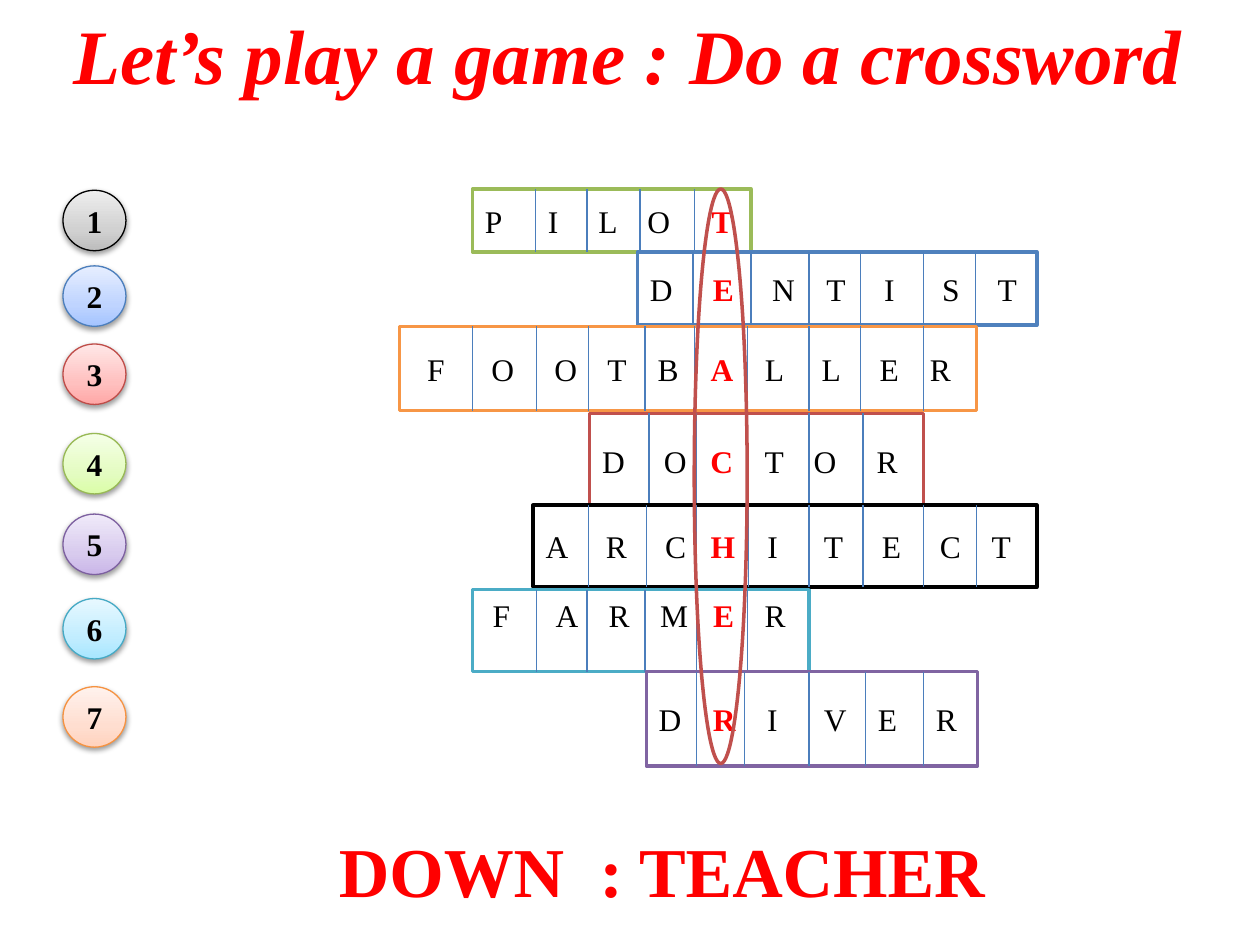
from dataclasses import dataclass

from lxml.etree import SubElement
from pptx import Presentation
from pptx.dml.color import RGBColor
from pptx.enum.shapes import MSO_CONNECTOR, MSO_SHAPE
from pptx.enum.text import MSO_ANCHOR, PP_ALIGN
from pptx.oxml.ns import qn
from pptx.util import Inches, Pt


@dataclass(frozen=True)
class Theme:
    font: str = "Times New Roman"
    answer: str = "FF0000"
    letter: str = "000000"
    paper: str = "FFFFFF"
    divider: str = "4B7EBC"
    column_ring: str = "C0504D"
    title_size: int = 44
    solution_size: int = 40
    letter_size: int = 18
    thin: float = 0.75
    thick: float = 2


THEME = Theme()

# word, index of the answer letter, left, top, width, height, outline,
# left edge of each letter, dividers between the letters
ROWS = [
    ("PILOT", 4, 3.75, 1.5, 2.21, 0.5, "9BBB59",
     [3.85, 4.35, 4.75, 5.14, 5.65],
     [4.25, 4.66, 5.08, 5.51]),
    ("DENTIST", 1, 5.06, 2, 3.17, 0.58, "4F81BD",
     [5.16, 5.66, 6.13, 6.56, 7.02, 7.48, 7.92],
     [5.5, 5.96, 6.42, 6.83, 7.33, 7.74]),
    ("FOOTBALLER", 5, 3.17, 2.59, 4.58, 0.67, "F79646",
     [3.39, 3.9, 4.4, 4.82, 5.22, 5.64, 6.07, 6.52, 6.98, 7.38],
     [3.75, 4.26, 4.67, 5.12, 5.51, 5.93, 6.42, 6.83, 7.33]),
    ("DOCTOR", 2, 4.68, 3.28, 2.65, 0.75, "C0504D",
     [4.78, 5.27, 5.64, 6.07, 6.46, 6.96],
     [5.15, 5.53, 5.93, 6.42, 6.85]),
    ("ARCHITECT", 3, 4.23, 4.01, 4, 0.65, "000000",
     [4.33, 4.81, 5.28, 5.64, 6.09, 6.54, 7, 7.46, 7.87],
     [4.67, 5.13, 5.53, 5.94, 6.42, 6.85, 7.33, 7.75]),
    ("FARMER", 4, 3.75, 4.68, 2.67, 0.65, "4BACC6",
     [3.91, 4.41, 4.83, 5.24, 5.66, 6.07],
     [4.26, 4.66, 5.12, 5.53, 5.93]),
    ("DRIVER", 1, 5.13, 5.33, 2.63, 0.75, "8064A2",
     [5.23, 5.66, 6.09, 6.54, 6.97, 7.43],
     [5.53, 5.91, 6.42, 6.87, 7.33]),
]

# top, outline, gradient colours from bottom to top
BADGES = [
    (1.51, "000000", ("BDBDBD", "D1D1D1", "EEEEEE")),
    (2.11, "4B7EBC", ("A4C4FF", "BFD4FF", "E6EEFF")),
    (2.73, "BF4C48", ("FFA6A5", "FFC0BF", "FFE7E7")),
    (3.44, "98B955", ("DAFDA7", "E4FCC2", "F5FFE7")),
    (4.08, "7D60A0", ("C9B5E8", "D8CBEE", "F0EAF9")),
    (4.75, "46AAC5", ("A7E6FF", "C1EDFF", "E7F8FF")),
    (5.45, "F69240", ("FFD2BD", "FFDED0", "FFF2ED")),
]

# text, left, top, width, height, size, italic, alignment, left margin
HEADINGS = [
    ("Let’s play a game : Do a crossword", -0.03, 0.01, 10.03, 5.55,
     THEME.title_size, True, PP_ALIGN.CENTER, 0.1),
    ("DOWN", 2.17, 6.52, 2.55, 0.77,
     THEME.solution_size, False, PP_ALIGN.LEFT, 0.52),
    (": TEACHER", 4.66, 6.52, 5.39, 0.77,
     THEME.solution_size, False, PP_ALIGN.LEFT, 0.1),
]


def add_run(paragraph, text, size, color, bold=False, italic=False):
    run = paragraph.add_run()
    run.text = text
    run.font.name = THEME.font
    run.font.size = Pt(size)
    run.font.bold = bold
    run.font.italic = italic
    run.font.color.rgb = RGBColor.from_string(color)


def add_outlined(kind, left, top, width, height, color, weight):
    """Add an unfilled preset shape without a shadow."""
    shape = slide.shapes.add_shape(
        kind, Inches(left), Inches(top), Inches(width), Inches(height))
    shape.shadow.inherit = False
    shape.fill.background()
    shape.line.color.rgb = RGBColor.from_string(color)
    shape.line.width = Pt(weight)
    shape.text_frame.vertical_anchor = MSO_ANCHOR.MIDDLE
    return shape


presentation = Presentation()
presentation.slide_width = Inches(10)
presentation.slide_height = Inches(7.5)
slide = presentation.slides.add_slide(presentation.slide_layouts[6])

for text, left, top, width, height, size, italic, alignment, margin in HEADINGS:
    box = slide.shapes.add_textbox(
        Inches(left), Inches(top), Inches(width), Inches(height))
    box.text_frame.word_wrap = True
    box.text_frame.margin_left = Inches(margin)
    paragraph = box.text_frame.paragraphs[0]
    paragraph.alignment = alignment
    add_run(paragraph, text, size, THEME.answer, True, italic)

for word, answer, left, top, width, height, color, starts, dividers in ROWS:
    row = add_outlined(
        MSO_SHAPE.RECTANGLE, left, top, width, height, color, THEME.thick)
    row.fill.solid()
    row.fill.fore_color.rgb = RGBColor.from_string(THEME.paper)
    frame = row.text_frame
    frame.margin_left = Inches(starts[0] - left)
    frame.margin_right = 0
    if word == "FARMER":
        frame.vertical_anchor = MSO_ANCHOR.TOP
    paragraph = frame.paragraphs[0]
    paragraph.alignment = PP_ALIGN.LEFT
    tab_list = SubElement(paragraph._p.get_or_add_pPr(), qn("a:tabLst"))
    for start in starts[1:]:
        SubElement(tab_list, qn("a:tab"),
                   pos=str(Inches(start - starts[0])), algn="l")
    before, after = "\t".join(word[:answer]), "\t".join(word[answer + 1:])
    add_run(paragraph, before + "\t", THEME.letter_size, THEME.letter)
    add_run(paragraph, word[answer], THEME.letter_size, THEME.answer, True)
    if after:
        add_run(paragraph, "\t" + after, THEME.letter_size, THEME.letter)

    for x in dividers:
        divider = slide.shapes.add_connector(
            MSO_CONNECTOR.STRAIGHT,
            Inches(x), Inches(top), Inches(x), Inches(top + height))
        divider.line.color.rgb = RGBColor.from_string(THEME.divider)
        divider.line.width = Pt(THEME.thin)
        SubElement(divider._element.spPr, qn("a:effectLst"))

add_outlined(MSO_SHAPE.OVAL, 5.51, 1.5, 0.42, 4.56,
             THEME.column_ring, THEME.thick)

for number, (top, color, gradient) in enumerate(BADGES, start=1):
    badge = add_outlined(
        MSO_SHAPE.OVAL, 0.5, top, 0.5, 0.48, color, THEME.thin)
    badge.fill.gradient()
    badge.fill.gradient_angle = 90
    properties = badge._element.spPr
    stops = properties.find(".//" + qn("a:gsLst"))
    stops.clear()
    for percent, stop_color in zip((0, 35, 100), gradient):
        stop = SubElement(stops, qn("a:gs"), pos=str(percent * 1000))
        SubElement(stop, qn("a:srgbClr"), val=stop_color)
    shadow = SubElement(
        properties.find(qn("a:effectLst")), qn("a:outerShdw"),
        blurRad=str(Pt(3.1)), dist=str(Pt(1.6)), dir="5400000", rotWithShape="0")
    shade = SubElement(shadow, qn("a:srgbClr"), val="000000")
    SubElement(shade, qn("a:alpha"), val="38000")
    paragraph = badge.text_frame.paragraphs[0]
    paragraph.alignment = PP_ALIGN.CENTER
    add_run(paragraph, str(number), THEME.letter_size, THEME.letter, True)

presentation.save("out.pptx")
